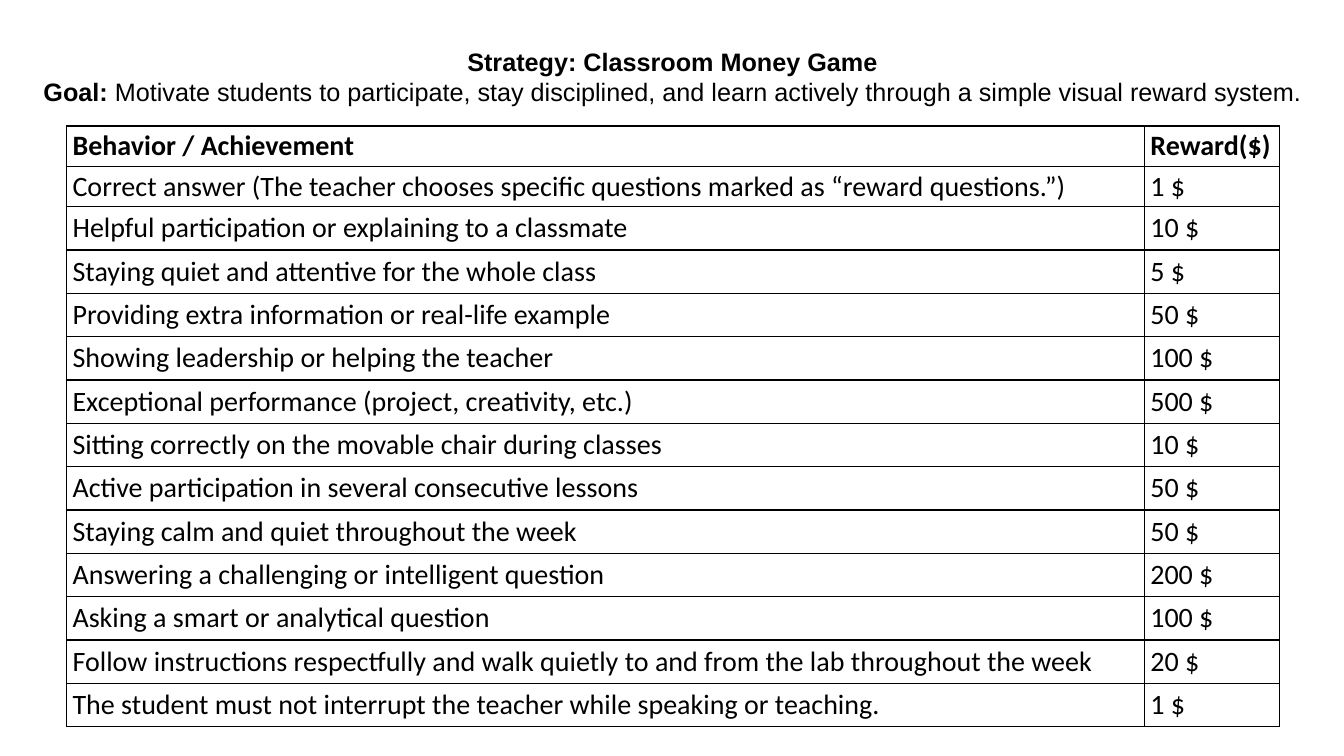
import pptx
import pptx.dml.color
import pptx.enum.text
import pptx.oxml
import pptx.oxml.ns
import pptx.util
from pptx.util import Inches

COLORS = {"ink": "000000"}
ROW_HEIGHTS = {"compact": 0.4, "regular": 0.43}
COLUMN_WIDTHS = (10.69, 1.34)

HEADING = [
    [("Strategy: Classroom Money Game", True)],
    [
        ("Goal:", True),
        (" Motivate students to participate, stay disciplined, and learn actively"
         " through a simple visual reward system.", False),
    ],
]

HEADER = ("Behavior / Achievement", "Reward($)")
REWARDS = [
    ("Correct answer (The teacher chooses specific questions marked as “reward questions.”)", 1),
    ("Helpful participation or explaining to a classmate", 10),
    ("Staying quiet and attentive for the whole class", 5),
    ("Providing extra information or real-life example", 50),
    ("Showing leadership or helping the teacher", 100),
    ("Exceptional performance (project, creativity, etc.)", 500),
    ("Sitting correctly on the movable chair during classes", 10),
    ("Active participation in several consecutive lessons", 50),
    ("Staying calm and quiet throughout the week", 50),
    ("Answering a challenging or intelligent question", 200),
    ("Asking a smart or analytical question", 100),
    ("Follow instructions respectfully and walk quietly to and from the lab throughout the week", 20),
    ("The student must not interrupt the teacher while speaking or teaching.", 1),
]


def add_run(paragraph, text, font, size, bold):
    run = paragraph.add_run()
    run.text = text
    run.font.name = font
    run.font.size = pptx.util.Pt(size)
    run.font.bold = bold
    run.font.color.rgb = pptx.dml.color.RGBColor.from_string(COLORS["ink"])


def add_heading(slide):
    heading = slide.shapes.title
    heading.left, heading.top = Inches(0.27), Inches(0.4)
    heading.width, heading.height = Inches(12.8), Inches(0.71)
    frame = heading.text_frame
    frame.word_wrap = False
    frame.auto_size = pptx.enum.text.MSO_AUTO_SIZE.SHAPE_TO_FIT_TEXT
    frame.vertical_anchor = pptx.enum.text.MSO_ANCHOR.MIDDLE
    for index, runs in enumerate(HEADING):
        paragraph = frame.add_paragraph() if index else frame.paragraphs[0]
        paragraph.alignment = pptx.enum.text.PP_ALIGN.CENTER
        for text, bold in runs:
            add_run(paragraph, text, "Arial", 18, bold)


def set_borders(cell):
    properties = cell._tc.get_or_add_tcPr()
    for side in ("lnL", "lnR", "lnT", "lnB"):
        properties.append(pptx.oxml.parse_xml(
            f'<a:{side} {pptx.oxml.ns.nsdecls("a")} w="{pptx.util.Pt(1)}">'
            f'<a:solidFill><a:srgbClr val="{COLORS["ink"]}"/></a:solidFill></a:{side}>'
        ))


def fill_cell(cell, text, bold):
    cell.margin_left = cell.margin_right = Inches(0.06)
    cell.margin_top = cell.margin_bottom = Inches(0.03)
    cell.vertical_anchor = pptx.enum.text.MSO_ANCHOR.MIDDLE
    set_borders(cell)
    cell.fill.background()
    add_run(cell.text_frame.paragraphs[0], text, "Calibri", 20, bold)


def add_reward_table(slide):
    rows = [HEADER] + [(behavior, f"{dollars} $") for behavior, dollars in REWARDS]
    table = slide.shapes.add_table(
        len(rows), len(HEADER), Inches(0.66), Inches(1.25), Inches(12.03), Inches(5.96)
    ).table
    table.first_row = table.horz_banding = False
    for column, width in zip(table.columns, COLUMN_WIDTHS):
        column.width = Inches(width)
    for index, texts in enumerate(rows):
        kind = "compact" if index < 2 else "regular"
        table.rows[index].height = Inches(ROW_HEIGHTS[kind])
        for column, text in enumerate(texts):
            fill_cell(table.cell(index, column), text, bold=index == 0)


def main():
    deck = pptx.Presentation()
    deck.slide_width, deck.slide_height = Inches(13.33), Inches(7.5)
    slide = deck.slides.add_slide(deck.slide_layouts.get_by_name("Title Only"))
    add_heading(slide)
    add_reward_table(slide)
    deck.save("out.pptx")


if __name__ == "__main__":
    main()
